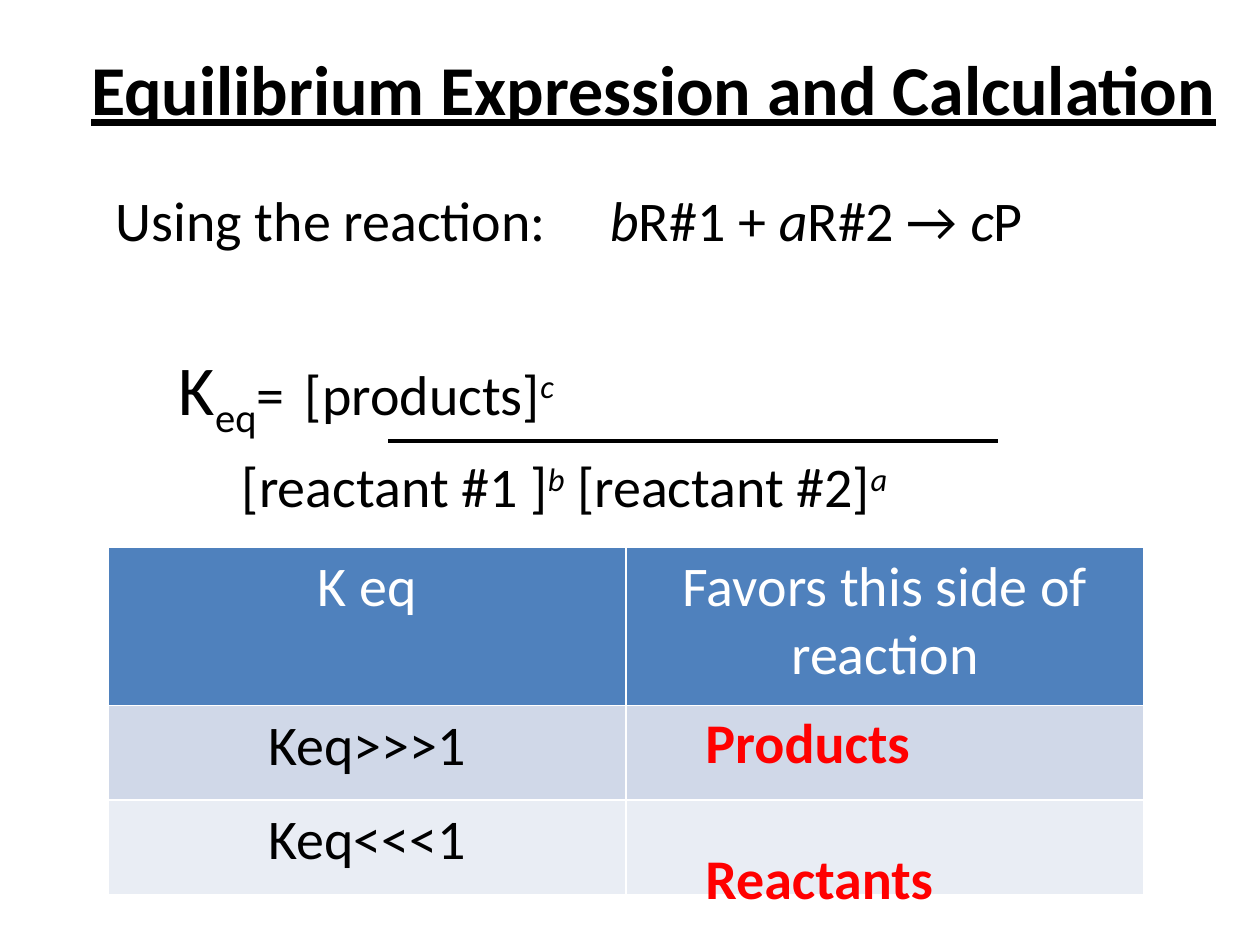
from dataclasses import dataclass

from lxml.etree import SubElement
from pptx import Presentation
from pptx.dml.color import RGBColor
from pptx.enum.shapes import MSO_CONNECTOR as Conn
from pptx.enum.text import MSO_ANCHOR as Anchor, MSO_AUTO_SIZE as AutoSize, PP_ALIGN as Align
from pptx.oxml.ns import qn
from pptx.util import Inches, Pt

WIDTH, HEIGHT = Inches(10), Inches(7.5)
BLACK, WHITE, RED = "000000", "FFFFFF", "FF0000"
HEADER, BAND_1, BAND_2 = "4F81BD", "D0D8E8", "E9EDF4"


@dataclass(frozen=True)
class Box:
    """Position and size in percent of the slide."""
    x: float
    y: float
    w: float
    h: float

    def emu(self) -> tuple[int, int, int, int]:
        """Return left, top, width and height in EMU."""
        return (int(WIDTH * self.x / 100), int(HEIGHT * self.y / 100),
                int(WIDTH * self.w / 100), int(HEIGHT * self.h / 100))


@dataclass(frozen=True)
class Row:
    """One table row with its look."""
    cells: tuple[str, str]
    height: float
    fill: str
    color: str


@dataclass(frozen=True)
class Line:
    """One body line: its runs with their formats, and the space before it."""
    runs: tuple[tuple[str, dict], ...]
    before: float | None = None


ITALIC = {"italic": True}
POWER = {"italic": True, "baseline": 30}
BODY = (
    Line((("Using the reaction:     ", {}), ("b", ITALIC), ("R#1 + ", {}),
          ("a", ITALIC), ("R#2 → ", {}), ("c", ITALIC), ("P", {}))),
    Line((("\tK", {"size": 40}), ("eq", {"size": 40, "baseline": -25}),
          ("= \t[products]", {}), ("c", POWER)), before=53),
    Line((("\t\t[reactant #1 ]", {}), ("b", POWER),
          (" [reactant #2]", {}), ("a", POWER))),
)
ROWS = (
    Row(("K eq", "Favors this side of reaction"), 16.8, HEADER, WHITE),
    Row(("Keq>>>1", ""), 10, BAND_1, BLACK),
    Row(("Keq<<<1", ""), 10, BAND_2, BLACK),
)


def rgb(value: str) -> RGBColor:
    """Turn a hex string into a colour."""
    return RGBColor.from_string(value)


def add_text(p, text: str, *, size: float = 32, color: str = BLACK, bold: bool = False,
             italic: bool = False, underline: bool = False, baseline: int = 0) -> None:
    """Append a formatted run to a paragraph."""
    r = p.add_run()
    r.text = text
    f = r.font
    f.name, f.size, f.bold, f.italic, f.underline = "Calibri", Pt(size), bold, italic, underline
    f.color.rgb = rgb(color)
    if baseline:
        r._r.get_or_add_rPr().set("baseline", str(baseline * 1000))


def place(sp, box: Box) -> None:
    """Move and size a shape."""
    sp.left, sp.top, sp.width, sp.height = box.emu()


def set_tabs(p, *stops: float) -> None:
    """Remove bullet and indent, and set tab stops in inches."""
    ppr = p._p.get_or_add_pPr()
    ppr.set("marL", "0")
    ppr.set("indent", "0")
    SubElement(ppr, qn("a:buNone"))
    tabs = SubElement(ppr, qn("a:tabLst"))
    for stop in stops:
        SubElement(tabs, qn("a:tab"), pos=str(Inches(stop)), algn="l")


def add_title(s, text: str, box: Box) -> None:
    """Fill the title placeholder."""
    sp = s.shapes.title
    place(sp, box)
    tf = sp.text_frame
    tf.auto_size, tf.vertical_anchor = AutoSize.NONE, Anchor.TOP
    p = tf.paragraphs[0]
    p.alignment = Align.CENTER
    add_text(p, text, size=40, bold=True, underline=True)


def add_body(s, lines: tuple[Line, ...], box: Box) -> None:
    """Fill the body placeholder with the reaction and its expression."""
    sp = s.placeholders[1]
    place(sp, box)
    tf = sp.text_frame
    tf.auto_size, tf.margin_left = AutoSize.NONE, Inches(0.07)
    for i, line in enumerate(lines):
        p = tf.add_paragraph() if i else tf.paragraphs[0]
        if line.before is not None:
            p.space_before = Pt(line.before)
        set_tabs(p, 0.5, 1, 2)
        for text, style in line.runs:
            add_text(p, text, **style)


def add_fraction_bar(s, box: Box) -> None:
    """Draw the line between numerator and denominator."""
    x, y, w, h = box.emu()
    bar = s.shapes.add_connector(Conn.STRAIGHT, x, y, x + w, y + h)
    bar.line.color.rgb, bar.line.width = rgb(BLACK), Pt(2.25)
    SubElement(bar._element.spPr, qn("a:effectLst"))


def add_table(s, rows: tuple[Row, ...], box: Box) -> None:
    """Draw the table of constants and favored sides."""
    table = s.shapes.add_table(len(rows), len(rows[0].cells), *box.emu()).table
    for i, row in enumerate(rows):
        table.rows[i].height = int(HEIGHT * row.height / 100)
        for cell, text in zip(table.rows[i].cells, row.cells):
            cell.fill.solid()
            cell.fill.fore_color.rgb = rgb(row.fill)
            if text:
                p = cell.text_frame.paragraphs[0]
                p.alignment = Align.CENTER
                add_text(p, text, color=row.color)


def add_answers(s, answers: tuple[str, ...], box: Box) -> None:
    """Write the favored sides one empty line apart."""
    tf = s.shapes.add_textbox(*box.emu()).text_frame
    tf.word_wrap = True
    for i, answer in enumerate(answers):
        p = tf.add_paragraph() if i else tf.paragraphs[0]
        p.space_before = Pt(39 if i else 0)
        add_text(p, answer, color=RED, bold=True)


def main() -> None:
    """Build and save the slide."""
    prs = Presentation()
    prs.slide_width, prs.slide_height = WIDTH, HEIGHT
    s = prs.slides.add_slide(prs.slide_layouts[1])
    add_body(s, BODY, Box(8.5, 18.93, 90, 73.73))
    add_title(s, "Equilibrium Expression and Calculation", Box(5.2, 4.13, 93.3, 10.27))
    add_fraction_bar(s, Box(30.8, 46.67, 48.4, 0))
    add_table(s, ROWS, Box(8.6, 57.87, 82.2, 36.8))
    add_answers(s, ("Products", "Reactants"), Box(55, 74.27, 20.8, 22.93))
    prs.save("out.pptx")


if __name__ == "__main__":
    main()
